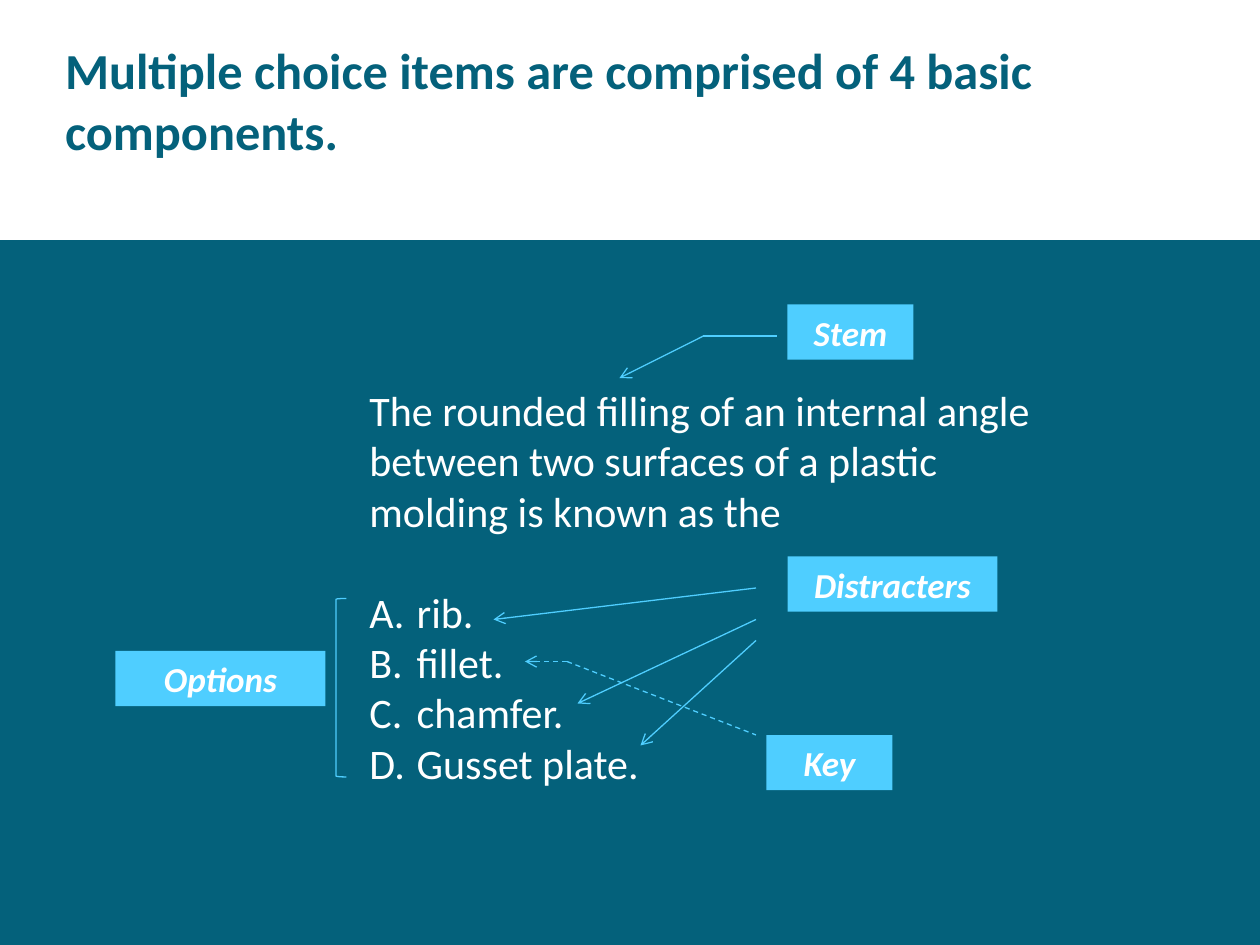
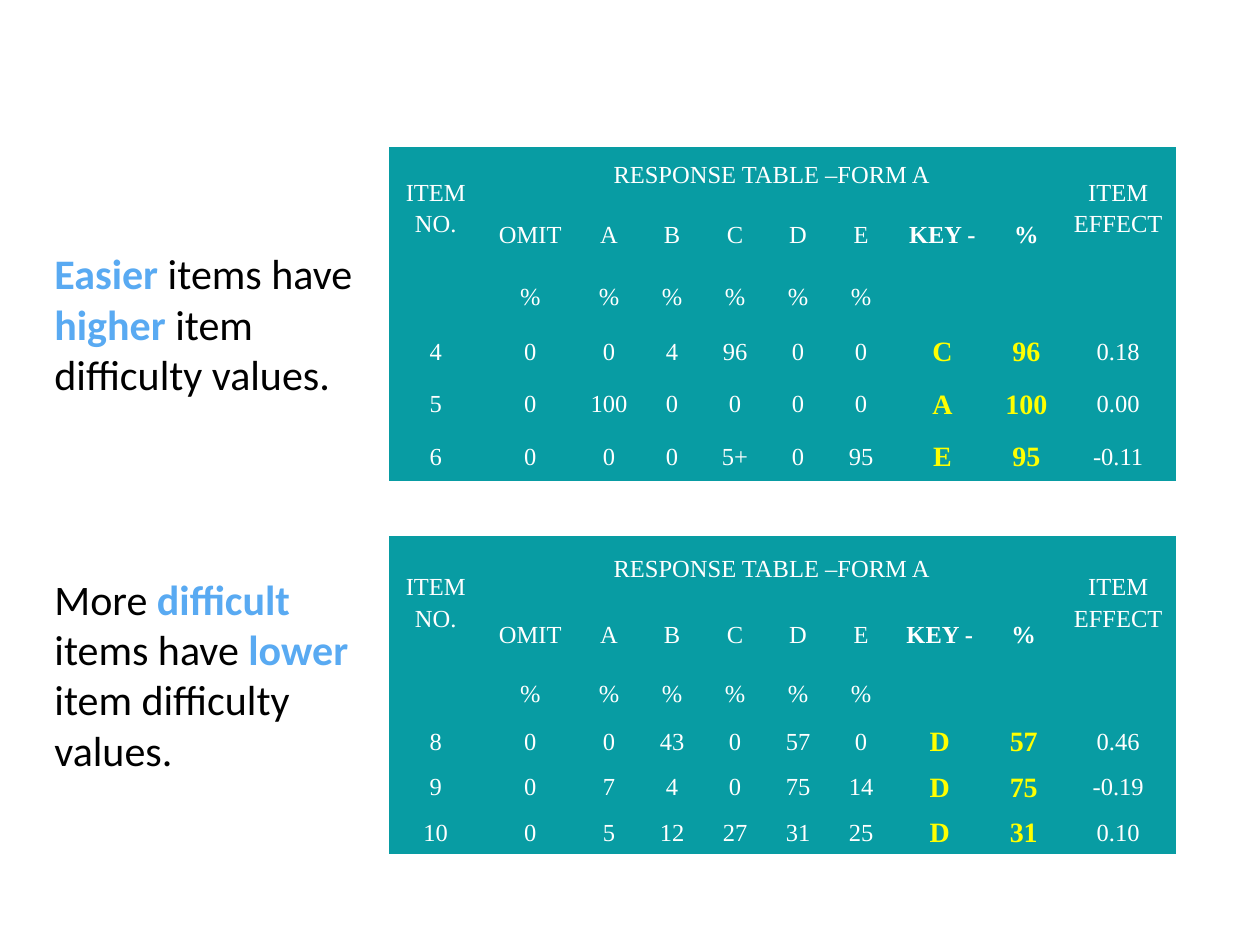
from lxml import etree
from pptx import Presentation
from pptx import util as u
from pptx.dml.color import RGBColor
from pptx.enum import dml, shapes, text
from pptx.oxml.ns import qn

Pt = u.Pt
COLORS = {"deep": "04617B", "sky": "4FCEFF", "accent": "59AAF2", "teal": "089CA3",
          "yellow": "FFFF00", "white": "FFFFFF", "black": "000000"}
BODY_FONT, TABLE_FONT = "Calibri", "Times New Roman"
NO_STYLE_NO_GRID = "{2D5ABB26-0587-4C30-8999-92F81FD0307C}"

OPTIONS = ["rib.", "fillet.", "chamfer.", "Gusset plate."]
LABELS = [("Stem", 450, 174, 72), ("Distracters", 450, 318, 120),
          ("Key", 438, 420, 72), ("Options", 66, 372, 120)]
# start, end, arrowhead, dashed
LINES = [
    ((432, 336), (282, 354), True, False),
    ((432, 354), (330, 402), True, False),
    ((432, 366), (366, 426), True, False),
    ((324, 378), (300, 378), True, True),
    ((324, 378), (432, 420), False, True),
    ((444, 192), (402, 192), False, False),
    ((402, 192), (354, 216), True, False),
]

ANSWER_HEADS = ["OMIT", "A", "B", "C", "D", "E"]
HEADER_ROWS = [
    ["ITEM NO.", "RESPONSE TABLE –FORM A"] + [""] * 7 + ["ITEM EFFECT"],
    [""] + ANSWER_HEADS + ["KEY -", "%", ""],
    [""] + ["%"] * len(ANSWER_HEADS) + [""] * 3,
]
KEY_COLUMNS = (7, 8)
EASY_ITEMS = [
    ["4", "0", "0", "4", "96", "0", "0", "C", "96", "0.18"],
    ["5", "0", "100", "0", "0", "0", "0", "A", "100", "0.00"],
    ["6", "0", "0", "0", "5+", "0", "95", "E", "95", "-0.11"],
]
HARD_ITEMS = [
    ["8", "0", "0", "43", "0", "57", "0", "D", "57", "0.46"],
    ["9", "0", "7", "4", "0", "75", "14", "D", "75", "-0.19"],
    ["10", "0", "5", "12", "27", "31", "25", "D", "31", "0.10"],
]


def color(name):
    return RGBColor.from_string(COLORS[name])


def add_span(para, words, size=24, font=BODY_FONT, ink="white", bold=False, italic=False):
    span = para.add_run()
    span.text = words
    span.font.size, span.font.name = Pt(size), font
    span.font.bold, span.font.italic = bold, italic
    span.font.color.rgb = color(ink)


def add_text_box(page, left, top, width, height):
    box = page.shapes.add_textbox(Pt(left), Pt(top), Pt(width), Pt(height))
    box.text_frame.word_wrap = True
    return box.text_frame


def add_filled(page, left, top, width, height, fill):
    box = page.shapes.add_shape(shapes.MSO_SHAPE.RECTANGLE,
                                Pt(left), Pt(top), Pt(width), Pt(height))
    box.shadow.inherit = False
    box.fill.solid()
    box.fill.fore_color.rgb = color(fill)
    box.line.fill.background()
    return box


def set_title(page, words):
    title = page.shapes.title
    title.left, title.top, title.width, title.height = Pt(30), Pt(18), Pt(690), Pt(78)
    frame = title.text_frame
    frame.auto_size = text.MSO_AUTO_SIZE.NONE
    frame.vertical_anchor = text.MSO_ANCHOR.MIDDLE
    para = frame.paragraphs[0]
    para.alignment = text.PP_ALIGN.LEFT
    add_span(para, words, size=28.8, ink="deep", bold=True)


def add_label(page, words, left, top, width):
    frame = add_filled(page, left, top, width, 31.5, "sky").text_frame
    frame.vertical_anchor = text.MSO_ANCHOR.MIDDLE
    para = frame.paragraphs[0]
    para.alignment = text.PP_ALIGN.CENTER
    add_span(para, words, size=20, bold=True, italic=True)


def add_line(page, start, end, arrow, dashed):
    line = page.shapes.add_connector(shapes.MSO_CONNECTOR.STRAIGHT,
                                     *map(Pt, start), *map(Pt, end))
    line.line.color.rgb = color("sky")
    line.line.width = Pt(0.75)
    if dashed:
        line.line.dash_style = dml.MSO_LINE.DASH
    if arrow:
        etree.SubElement(line.line._get_or_add_ln(), qn("a:tailEnd"), type="arrow")
    etree.SubElement(line._element.spPr, qn("a:effectLst"))


def add_bracket(page, left, top, width, height):
    bracket = page.shapes.add_shape(shapes.MSO_SHAPE.LEFT_BRACKET,
                                    Pt(left), Pt(top), Pt(width), Pt(height))
    bracket.shadow.inherit = False
    bracket.fill.background()
    bracket.line.color.rgb = color("sky")
    bracket.line.width = Pt(0.75)


def add_question(page, stem, options):
    """Write the stem and its lettered options in one text box."""
    frame = add_text_box(page, 204, 216, 420, 240)
    add_span(frame.paragraphs[0], stem)
    for number, option in enumerate(options):
        para = frame.add_paragraph()
        if number == 0:
            para.space_before = Pt(29)
        props = para._p.get_or_add_pPr()
        props.set("marL", str(Pt(27)))
        props.set("indent", str(-Pt(27)))
        etree.SubElement(props, qn("a:buFont"), typeface=BODY_FONT)
        etree.SubElement(props, qn("a:buAutoNum"), type="alphaUcPeriod")
        add_span(para, option)


def add_statement(page, top, width, height, *parts):
    """Write alternating parts; a part given as a 1-tuple is highlighted."""
    para = add_text_box(page, 24, top, width, height).paragraphs[0]
    for part in parts:
        if isinstance(part, tuple):
            add_span(para, part[0], ink="accent", bold=True)
        else:
            add_span(para, part, ink="black")


def fill_cell(cell, words, **style):
    cell.fill.solid()
    cell.fill.fore_color.rgb = color("teal")
    if not words:
        return
    cell.vertical_anchor = text.MSO_ANCHOR.MIDDLE
    cell.margin_left = cell.margin_right = Pt(5)
    cell.margin_top = cell.margin_bottom = 0
    para = cell.text_frame.paragraphs[0]
    para.alignment = text.PP_ALIGN.CENTER
    para.line_spacing = 1.15
    add_span(para, words, font=TABLE_FONT, **style)


def add_response_table(page, top, items, key_widths, row_heights):
    widths = [54, 54] + [36] * 5 + key_widths + [66]
    rows = HEADER_ROWS + items
    frame = page.shapes.add_table(len(rows), len(widths), Pt(222), Pt(top),
                                  Pt(sum(widths)), Pt(sum(row_heights)))
    frame._element.xpath(".//a:tableStyleId")[0].text = NO_STYLE_NO_GRID
    table = frame.table
    table.first_row = table.horz_banding = False
    for column, width in zip(table.columns, widths):
        column.width = Pt(width)
    for row, height in zip(table.rows, row_heights):
        row.height = Pt(height)
    for r, row in enumerate(rows):
        for c, words in enumerate(row):
            style = {"size": 14, "bold": c in KEY_COLUMNS}
            if c in KEY_COLUMNS and r >= len(HEADER_ROWS):
                style.update(size=16, ink="yellow")
            fill_cell(table.cell(r, c), words, **style)
    table.cell(0, 1).merge(table.cell(0, 8))
    for c in (0, 9):
        table.cell(0, c).merge(table.cell(1, c))


def build_components(deck):
    page = deck.slides.add_slide(deck.slide_layouts[5])
    set_title(page, "Multiple choice items are comprised of 4 basic components.")
    band = add_filled(page, 0, 138, 720, 402, "deep")
    band.line.color.rgb = color("deep")
    band.line.width = Pt(2)
    add_question(page, "The rounded filling of an internal angle between two surfaces "
                       "of a plastic molding is known as the", OPTIONS)
    for label in LABELS:
        add_label(page, *label)
    for line in LINES:
        add_line(page, *line)
    add_bracket(page, 192, 342, 6, 102)


def build_difficulty(deck):
    page = deck.slides.add_slide(deck.slide_layouts[6])
    add_statement(page, 138, 198, 94.5, ("Easier",), " items have ", ("higher ",),
                  "item difficulty values.")
    add_statement(page, 324, 204, 124, "More ", ("difficult ",), "items have ",
                  ("lower",), " item difficulty values.")
    add_response_table(page, 84, EASY_ITEMS, [57, 39], [30, 32.5, 32.5, 30, 30, 30])
    add_response_table(page, 306, HARD_ITEMS, [54, 42], [36.5, 26, 27.5, 26, 26, 26])


def main():
    deck = Presentation()
    deck.slide_width, deck.slide_height = Pt(720), Pt(540)
    build_components(deck)
    build_difficulty(deck)
    deck.save("out.pptx")


if __name__ == "__main__":
    main()
